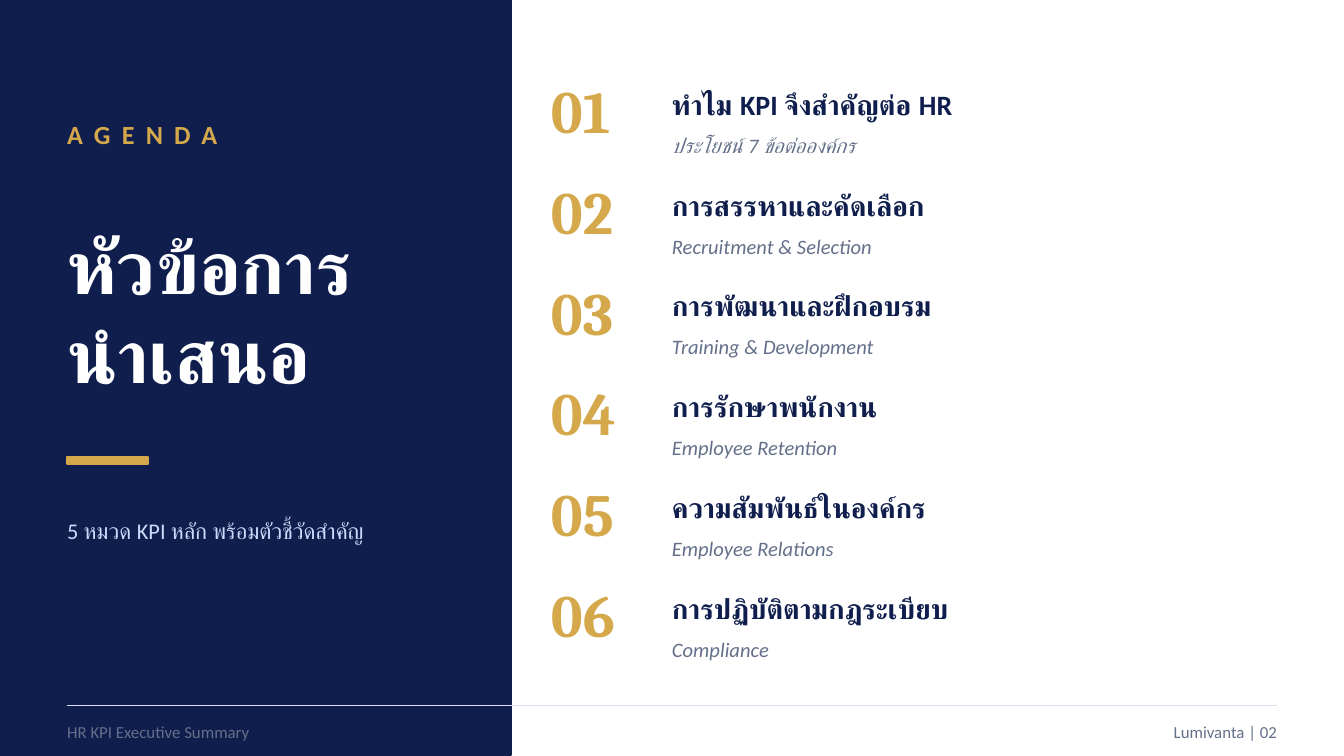
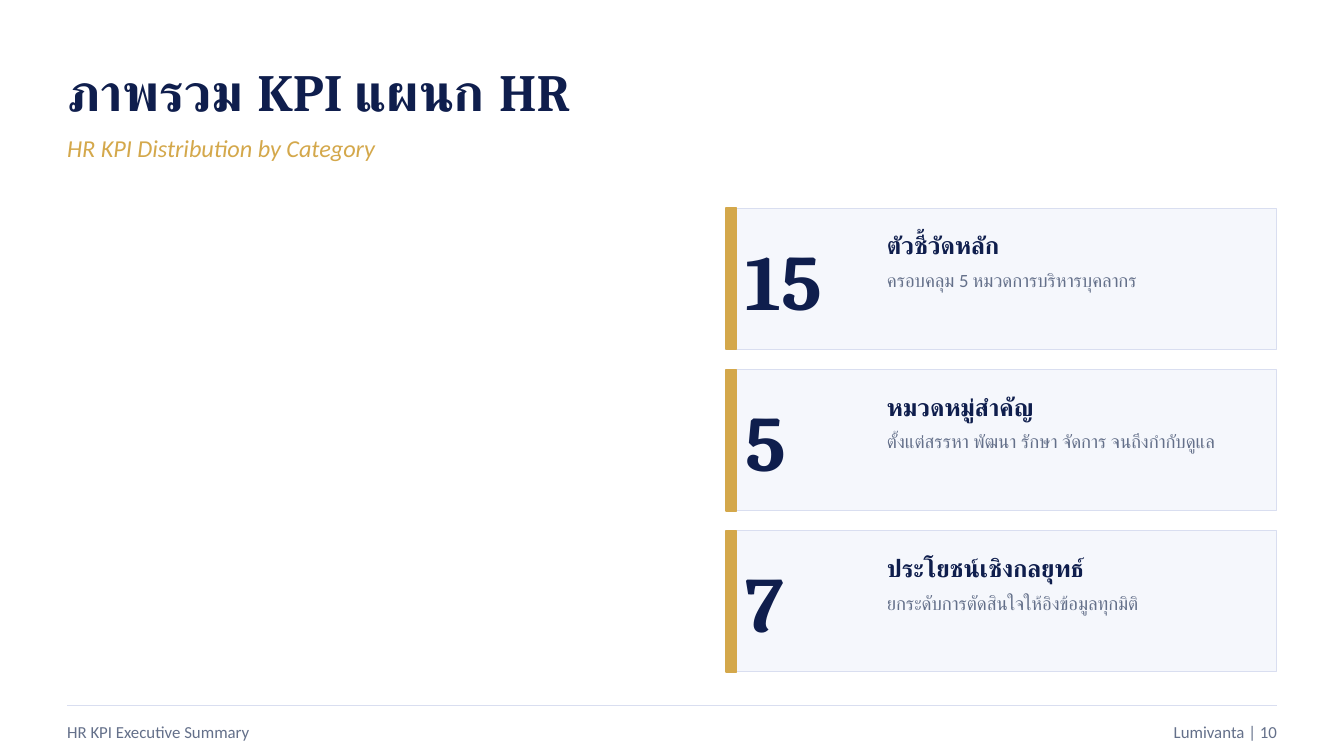
from dataclasses import dataclass

from lxml.etree import SubElement
from pptx import Presentation
from pptx.dml.color import RGBColor
from pptx.enum.shapes import MSO_CONNECTOR, MSO_SHAPE
from pptx.enum.text import MSO_ANCHOR, PP_ALIGN
from pptx.oxml.ns import qn
from pptx.util import Inches, Pt


@dataclass(frozen=True)
class Theme:
    navy: str = "0F1E4D"
    gold: str = "D4A84B"
    gray: str = "64708A"
    rule: str = "D9DEF0"
    card: str = "F5F7FC"
    ice: str = "CADCFC"
    white: str = "FFFFFF"
    head_font: str = "Cambria"
    body_font: str = "Calibri"
    figure: int = 42
    cover: int = 40
    number: int = 32
    title: int = 28
    item: int = 15
    eyebrow: int = 14
    subtitle: int = 13
    lead: int = 12
    note: int = 11
    detail: int = 10
    footer: int = 9


AGENDA = [
    ("ทำไม KPI จึงสำคัญต่อ HR", "ประโยชน์ 7 ข้อต่อองค์กร"),
    ("การสรรหาและคัดเลือก", "Recruitment & Selection"),
    ("การพัฒนาและฝึกอบรม", "Training & Development"),
    ("การรักษาพนักงาน", "Employee Retention"),
    ("ความสัมพันธ์ในองค์กร", "Employee Relations"),
    ("การปฏิบัติตามกฎระเบียบ", "Compliance"),
]
CARDS = [
    ("15", "ตัวชี้วัดหลัก", "ครอบคลุม 5 หมวดการบริหารบุคลากร"),
    ("5", "หมวดหมู่สำคัญ", "ตั้งแต่สรรหา พัฒนา รักษา จัดการ จนถึงกำกับดูแล"),
    ("7", "ประโยชน์เชิงกลยุทธ์", "ยกระดับการตัดสินใจให้อิงข้อมูลทุกมิติ"),
]


class Deck:
    def __init__(self, theme):
        self.theme = theme
        self.prs = Presentation()
        self.prs.slide_width = Inches(10)
        self.prs.slide_height = Inches(10) * 9 // 16
        self.s = None

    def add_slide(self):
        self.s = self.prs.slides.add_slide(self.prs.slide_layouts[6])
        fill = self.s.background.fill
        fill.solid()
        fill.fore_color.rgb = RGBColor.from_string(self.theme.white)

    def text(self, x, y, w, h, text, size, color, font=None, bold=None,
             italic=None, anchor=MSO_ANCHOR.MIDDLE, align=None, spacing=None):
        """Add a text box without margins; each line of text is a paragraph."""
        tf = self.s.shapes.add_textbox(Inches(x), Inches(y), Inches(w), Inches(h)).text_frame
        tf.word_wrap = True
        tf.margin_left = tf.margin_right = tf.margin_top = tf.margin_bottom = 0
        tf.vertical_anchor = anchor
        tf.text = text
        for p in tf.paragraphs:
            p.alignment = align
            for r in p.runs:
                r.font.size = Pt(size)
                r.font.bold = bold
                r.font.italic = italic
                r.font.color.rgb = RGBColor.from_string(color)
                r.font.name = font or self.theme.body_font
                if spacing:
                    r.font._element.set("spc", str(spacing * 100))

    def heading(self, x, y, w, h, text, size, color, **style):
        self.text(x, y, w, h, text, size, color, self.theme.head_font, bold=True, **style)

    def rect(self, x, y, w, h, fill, line=None, line_width=1):
        sp = self.s.shapes.add_shape(
            MSO_SHAPE.RECTANGLE, Inches(x), Inches(y), Inches(w), Inches(h))
        sp.shadow.inherit = False
        sp.fill.solid()
        sp.fill.fore_color.rgb = RGBColor.from_string(fill)
        sp.line.color.rgb = RGBColor.from_string(line or fill)
        sp.line.width = Pt(line_width)

    def line(self, x1, y1, x2, y2, color, width):
        cxn = self.s.shapes.add_connector(
            MSO_CONNECTOR.STRAIGHT, Inches(x1), Inches(y1), Inches(x2), Inches(y2))
        cxn.line.color.rgb = RGBColor.from_string(color)
        cxn.line.width = Pt(width)
        SubElement(cxn._element.spPr, qn("a:effectLst"))

    def footer(self, number):
        t = self.theme
        self.line(0.5, 5.25, 9.5, 5.25, t.rule, 0.75)
        self.text(0.5, 5.32, 5, 0.25, "HR KPI Executive Summary", t.footer, t.gray)
        self.text(7.5, 5.32, 2, 0.25, f"Lumivanta | {number:02}", t.footer, t.gray,
                  align=PP_ALIGN.RIGHT)

    def agenda_item(self, y, number, title, note):
        t = self.theme
        self.heading(4.1, y, 0.8, 0.5, f"{number:02}", t.number, t.gold,
                     anchor=MSO_ANCHOR.TOP)
        self.text(5, y + 0.05, 4.8, 0.35, title, t.item, t.navy, bold=True)
        self.text(5, y + 0.38, 4.8, 0.3, note, t.note, t.gray, italic=True)

    def stat_card(self, y, figure, title, detail):
        t = self.theme
        self.rect(5.4, y, 4.1, 1.05, t.card, t.rule, 0.5)
        self.rect(5.4, y, 0.08, 1.05, t.gold)
        self.heading(5.55, y + 0.1, 1, 0.85, figure, t.figure, t.navy)
        self.text(6.6, y + 0.1, 2.8, 0.35, title, t.subtitle, t.navy, bold=True)
        self.text(6.6, y + 0.45, 2.8, 0.55, detail, t.detail, t.gray,
                  anchor=MSO_ANCHOR.TOP)


def agenda_slide(deck):
    t = deck.theme
    deck.add_slide()
    deck.rect(0, 0, 3.8, 5.62, t.navy)
    deck.text(0.5, 0.8, 3, 0.4, "AGENDA", t.eyebrow, t.gold, bold=True, spacing=6)
    deck.heading(0.5, 1.3, 3, 2, "หัวข้อการ\nนำเสนอ", t.cover, t.white)
    deck.rect(0.5, 3.4, 0.6, 0.05, t.gold)
    deck.text(0.5, 3.55, 3, 0.8, "5 หมวด KPI หลัก พร้อมตัวชี้วัดสำคัญ", t.lead, t.ice)
    for i, (title, note) in enumerate(AGENDA):
        deck.agenda_item(0.55 + i * 0.75, i + 1, title, note)
    deck.footer(2)


def overview_slide(deck):
    t = deck.theme
    deck.add_slide()
    deck.heading(0.5, 0.4, 9, 0.55, "ภาพรวม KPI แผนก HR", t.title, t.navy)
    deck.text(0.5, 0.95, 9, 0.3, "HR KPI Distribution by Category", t.subtitle, t.gold,
              italic=True)
    for i, card in enumerate(CARDS):
        deck.stat_card(1.55 + i * 1.2, *card)
    deck.footer(10)


def main():
    deck = Deck(Theme())
    agenda_slide(deck)
    overview_slide(deck)
    deck.prs.save("out.pptx")


if __name__ == "__main__":
    main()
